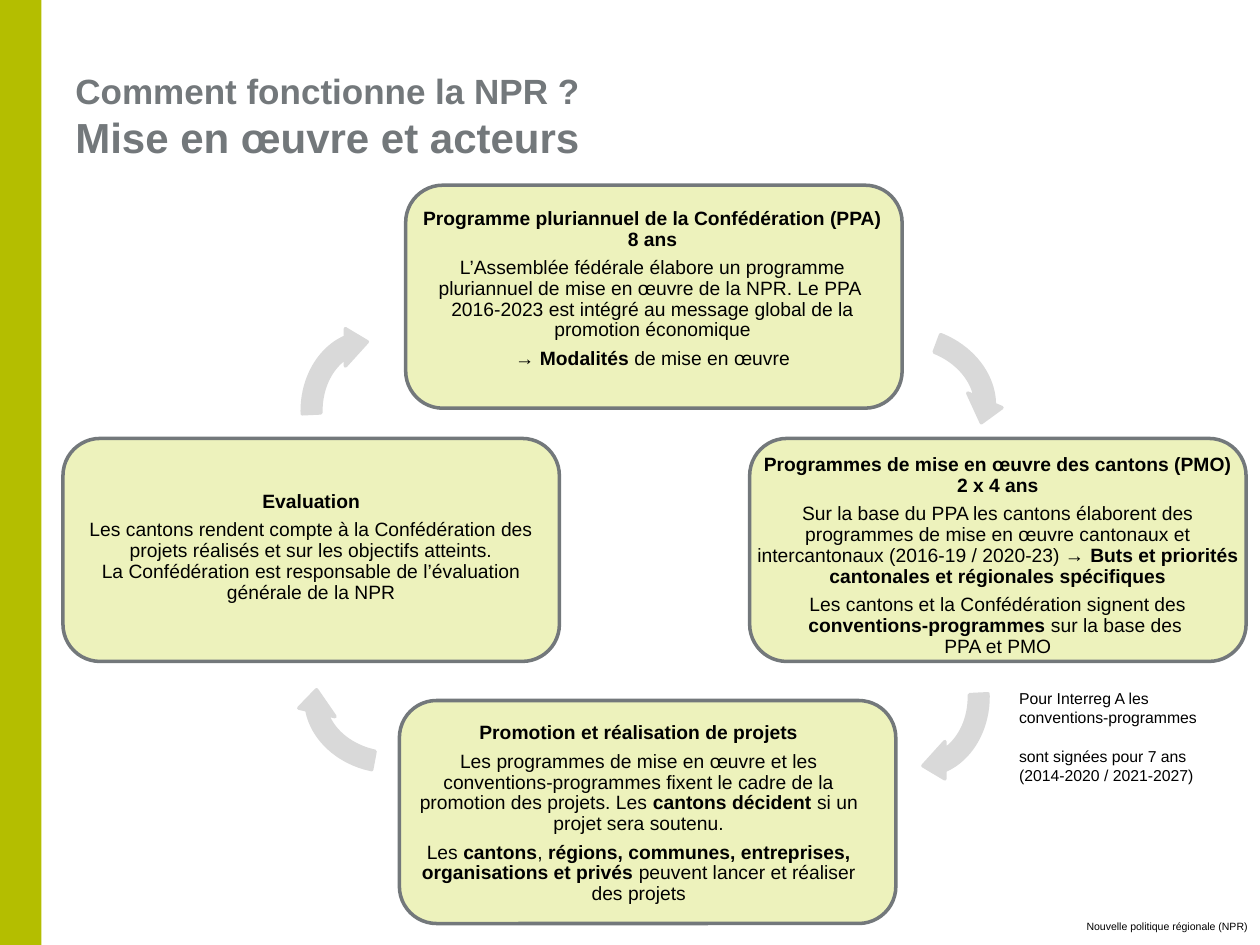
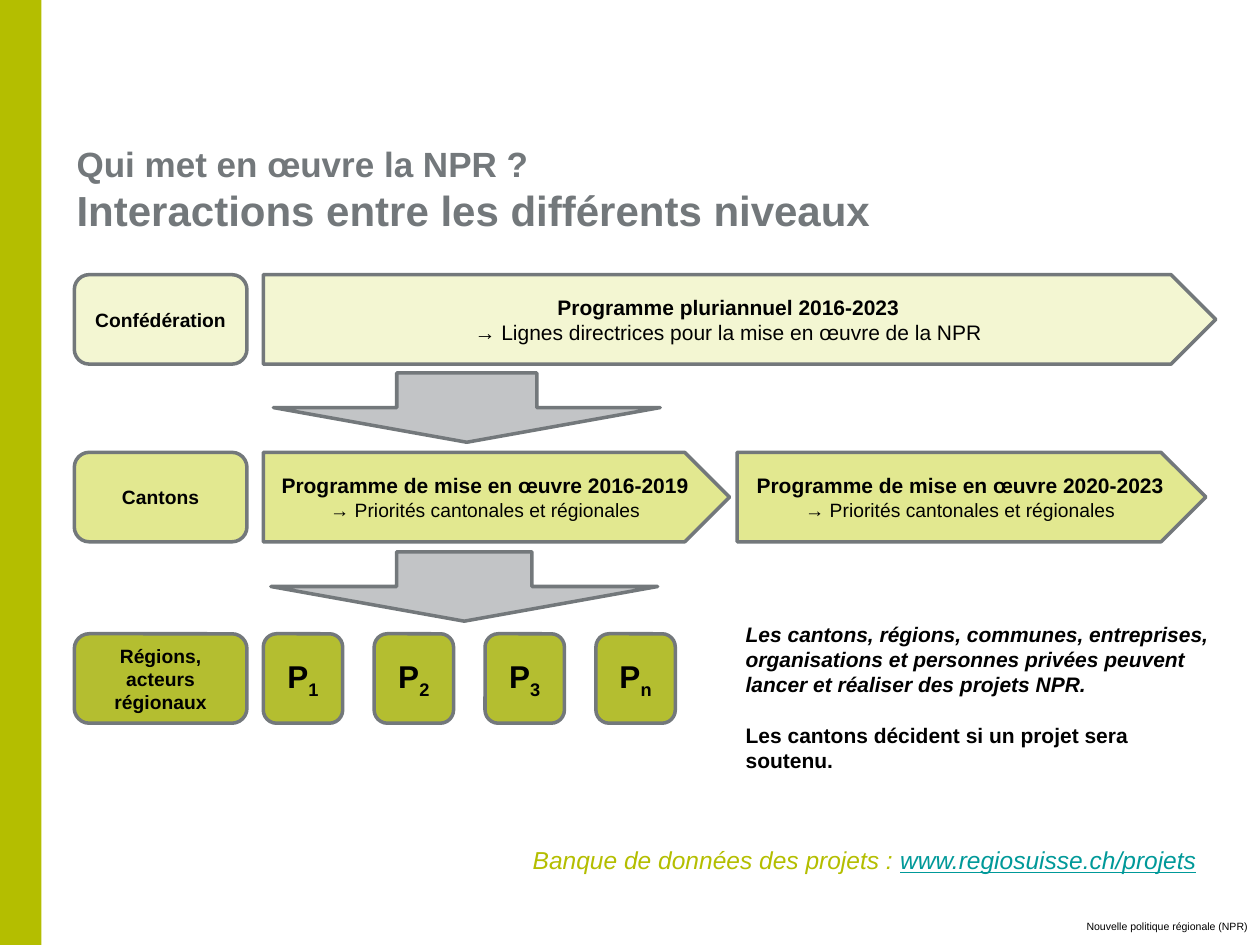
from copy import deepcopy

from pptx import Presentation
from pptx.dml.color import RGBColor
from pptx.enum import shapes, text
from pptx.util import Inches, Pt

# Shared look
FONT = "Arial"
GREEN, GREY, BLACK, TEAL = "B4BE00", "73787B", "000000", "009999"
CARD, ARC, DOWN = "EDF2BC", "D9D9D9", "C2C4C6"
LEVELS = {"federal": "F3F6D2", "cantonal": "E2E890", "regional": "B4BE30"}
SHAPE = shapes.MSO_SHAPE
CENTER, RIGHT = text.PP_ALIGN.CENTER, text.PP_ALIGN.RIGHT
MIDDLE, TOP = text.MSO_ANCHOR.MIDDLE, text.MSO_ANCHOR.TOP


def rgb(value):
    return RGBColor.from_string(value)


def run(value, size=11, style="", color=BLACK, baseline=None):
    """Describe a run; style holds any of b(old), i(talic), u(nderline)."""
    return value, size, style, color, baseline


def add_run(p, value, size, style, color, baseline):
    for i, line in enumerate(value.split("\n")):
        if i:
            p.add_line_break()
            # The break takes the size of the run before it
            p._p[-1].append(deepcopy(r._r.rPr))
        r = p.add_run()
        r.text = line
        r.font.name = FONT
        r.font.size = Pt(size)
        r.font.bold = "b" in style
        r.font.italic = "i" in style
        r.font.underline = "u" in style
        r.font.color.rgb = rgb(color)
        if baseline is not None:
            r._r.get_or_add_rPr().set("baseline", str(baseline))


def write(sp, paragraphs, align=None, anchor=MIDDLE, spacing=None, after=0, inset=None):
    tf = sp.text_frame
    tf.word_wrap = True
    tf.vertical_anchor = anchor
    if inset is not None:
        tf.margin_left = tf.margin_right = Inches(inset)
        tf.margin_top = tf.margin_bottom = Inches(inset)
    for i, runs in enumerate(paragraphs):
        p = tf.add_paragraph() if i else tf.paragraphs[0]
        p.alignment = align
        p.line_spacing = spacing
        if after:
            p.space_after = Pt(after)
        for item in runs:
            add_run(p, *item)
    return tf


def add_text(parent, box, paragraphs, **layout):
    sp = parent.shapes.add_textbox(*map(Inches, box))
    return write(sp, paragraphs, **layout)


def add_shape(parent, kind, box, fill, line=GREY, paragraphs=(), adjust=()):
    sp = parent.shapes.add_shape(kind, *map(Inches, box))
    sp.shadow.inherit = False
    sp.fill.solid()
    sp.fill.fore_color.rgb = rgb(fill)
    if line:
        sp.line.color.rgb = rgb(line)
        sp.line.width = Pt(2)
    else:
        sp.line.fill.background()
    for i, value in enumerate(adjust):
        sp.adjustments[i] = value
    if paragraphs:
        write(sp, paragraphs, align=CENTER)
    return sp


def add_base(prs, left, top, question, heading):
    """New slide with green band, two-line title and footer."""
    s = prs.slides.add_slide(prs.slide_layouts[6])
    add_shape(s, SHAPE.RECTANGLE, (0, 0, 0.33, 7.5), GREEN, line=None)
    add_text(s, (left, top, 9.2, 0.63),
             [[run(question + "\n", 20, "b", GREY), run(heading, 24, "b", GREY)]])
    add_text(s, (8.23, 7.25, 1.77, 0.29),
             [[run("Nouvelle politique régionale (NPR)", 6)]], align=RIGHT, anchor=TOP)
    return s


def add_card(s, left, top, text_box, heading, *paragraphs):
    group = s.shapes.add_group_shape()
    add_shape(group, SHAPE.ROUNDED_RECTANGLE, (left, top, 3.94, 1.77), CARD)
    add_text(group, text_box, [[run(heading, style="b")], *paragraphs],
             align=CENTER, spacing=0.9, after=4.4, inset=0.05)


def add_cycle_arrow(s, left, top, rotation):
    sp = add_shape(s, SHAPE.CIRCULAR_ARROW, (left, top, 1.39, 1.18), ARC, ARC,
                   adjust=(0.125, 11.423, 204.577, 160.43, 0.125))
    sp.rotation = rotation


def add_level(s, top, name, level):
    add_shape(s, SHAPE.ROUNDED_RECTANGLE, (0.59, top, 1.37, 0.71), LEVELS[level],
              paragraphs=[[run(name, style="b")]])


def add_programme(s, left, top, width, level, heading, detail, detail_size=11):
    add_shape(s, SHAPE.PENTAGON, (left, top, width, 0.71), LEVELS[level],
              paragraphs=[[run(heading, 12, "b")], [run("→ " + detail, detail_size)]])


def build_cycle(prs):
    s = add_base(prs, 0.5, 0.6, "Comment fonctionne la NPR ?", "Mise en œuvre et acteurs")

    # Four stages
    add_card(s, 0.5, 3.48, (0.61, 3.52, 3.72, 1.65), "Evaluation",
             [run("Les cantons rendent compte à la Confédération des projets réalisés "
                  "et sur les objectifs atteints.\nLa Confédération est responsable de "
                  "l’évaluation générale de la NPR")])
    add_card(s, 3.22, 1.47, (3.21, 1.66, 3.94, 1.27),
             "Programme pluriannuel de la Confédération (PPA)\n8 ans",
             [run("L’Assemblée fédérale élabore un programme pluriannuel de mise en œuvre "
                  "de la NPR. Le PPA \n2016-2023 est intégré au message global de la "
                  "promotion économique")],
             [run("→ "), run("Modalités", style="b"), run(" de mise en œuvre")])
    add_card(s, 5.95, 3.48, (5.95, 3.8, 3.94, 1.23),
             "Programmes de mise en œuvre des cantons (PMO)\n2 x 4 ans",
             [run("Sur la base du PPA les cantons élaborent des programmes de mise en œuvre "
                  "cantonaux et intercantonaux (2016-19 / 2020-23) → "),
              run("Buts et priorités cantonales et régionales spécifiques", style="b")],
             [run("Les cantons et la Confédération signent des "),
              run("conventions-programmes", style="b"),
              run(" sur la base des \nPPA et PMO")])
    add_card(s, 3.17, 5.56, (3.22, 5.69, 3.7, 1.54), "Promotion et réalisation de projets",
             [run("Les programmes de mise en œuvre et les conventions-programmes fixent le "
                  "cadre de la promotion des projets. Les "),
              run("cantons décident ", style="b"), run("si un projet sera soutenu.")],
             [run("Les "), run("cantons", style="b"), run(", "),
              run("régions, communes, entreprises, organisations et privés ", style="b"),
              run("peuvent lancer et réaliser des projets")])

    # Arrows around the cycle
    for left, top, rotation in ((2.35, 5.01, 193.3), (6.63, 4.94, 90),
                                (6.59, 2.55, 23.1), (2.22, 2.67, 270)):
        add_cycle_arrow(s, left, top, rotation)

    # Side note
    lines = ("Pour Interreg A les", "conventions-programmes",
             "sont signées pour 7 ans", "(2014-2020 / 2021-2027)")
    tf = add_text(s, (7.99, 5.42, 1.7, 0.71), [[run(line, 9)] for line in lines], anchor=TOP)
    tf.paragraphs[2].space_before = Pt(11)


def build_levels(prs):
    s = add_base(prs, 0.51, 1.18, "Qui met en œuvre la NPR ?",
                 "Interactions entre les différents niveaux")

    # Levels
    add_level(s, 2.18, "Confédération", "federal")
    add_level(s, 3.59, "Cantons", "cantonal")
    add_level(s, 5.03, "Régions, acteurs régionaux", "regional")

    # Programmes
    add_programme(s, 2.09, 2.18, 7.56, "federal", "Programme pluriannuel 2016-2023",
                  "Lignes directrices pour la mise en œuvre de la NPR", 12)
    for left, width, years in ((2.09, 3.7, "2016-2019"), (5.85, 3.72, "2020-2023")):
        add_programme(s, left, 3.59, width, "cantonal",
                      "Programme de mise en œuvre " + years,
                      "Priorités cantonales et régionales")
    for left, top, shaft in ((2.17, 2.96, 0.362), (2.15, 4.38, 0.35)):
        add_shape(s, SHAPE.DOWN_ARROW, (left, top, 3.07, 0.55), DOWN, adjust=(shaft, 0.5))

    # Projects
    for i, index in enumerate("123n"):
        add_shape(s, SHAPE.ROUNDED_RECTANGLE, (2.09 + 0.88 * i, 5.03, 0.63, 0.71),
                  LEVELS["regional"],
                  paragraphs=[[run("P", 18, "b"), run(index, 18, "b", baseline=-25000)]])

    # Who decides, and where to look
    tf = add_text(s, (5.82, 4.88, 3.96, 1.31), [
        [run("Les cantons, régions, communes, entreprises, organisations et personnes "
             "privées peuvent lancer et réaliser des projets NPR.", 12, "bi")],
        [run("Les cantons décident si un projet sera soutenu.", 12, "b")]], anchor=TOP)
    tf.paragraphs[1].space_before = Pt(14.5)
    add_text(s, (4.13, 6.66, 5.6, 0.34),
             [[run("Banque de données des projets : ", 14, "i", GREEN),
               run("www.regiosuisse.ch/projets", 14, "iu", TEAL)]], anchor=TOP)


def main():
    prs = Presentation()
    prs.slide_width, prs.slide_height = Inches(10), Inches(7.5)
    build_cycle(prs)
    build_levels(prs)
    prs.save("out.pptx")


if __name__ == "__main__":
    main()
